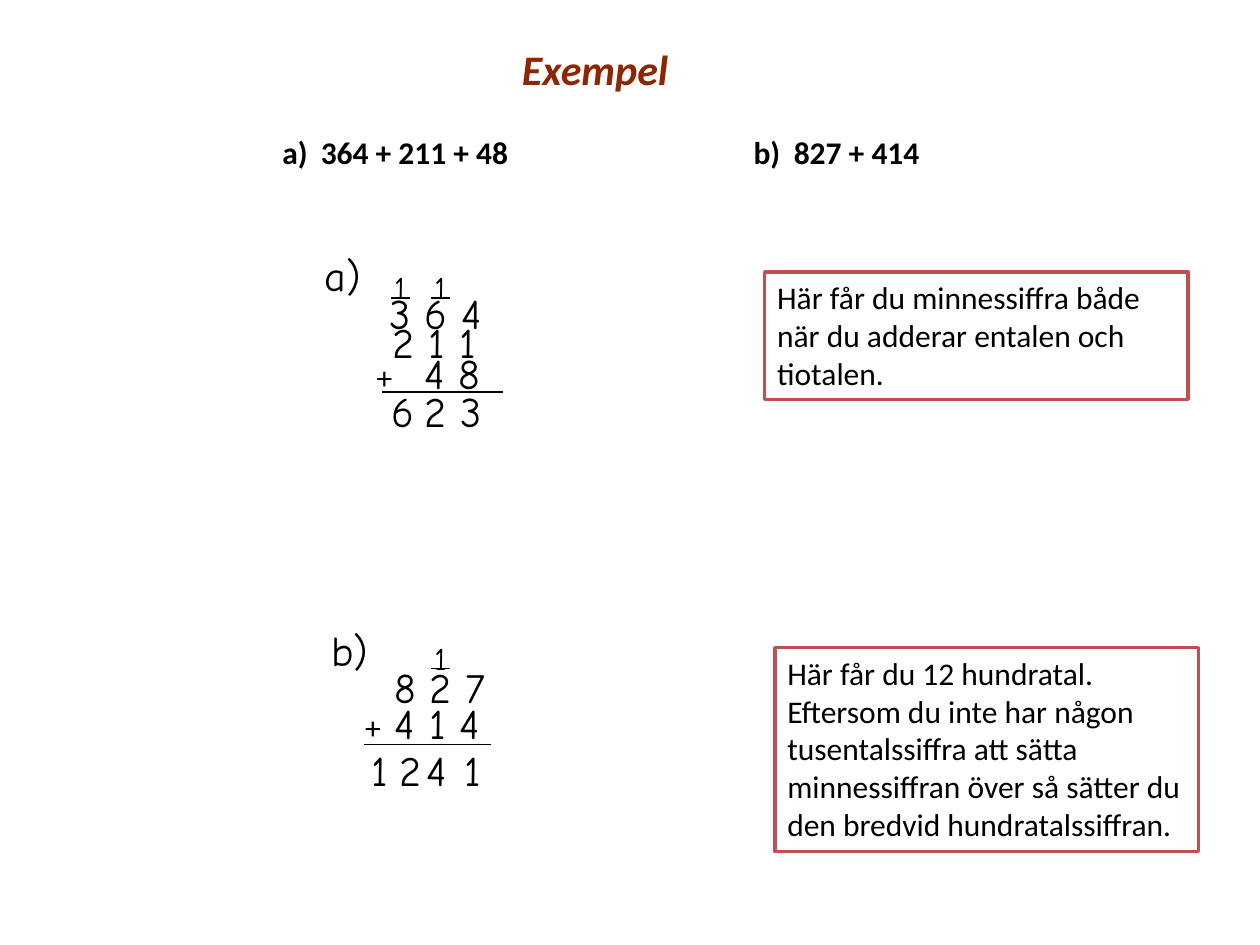
import lxml.etree
import pptx
import pptx.dml.color
import pptx.enum.shapes
import pptx.enum.text
import pptx.oxml.ns
import pptx.util

Pt = pptx.util.Pt
COLORS = {"text": "000000", "title": "8E2503", "box": "FFFFFF", "border": "C0504D"}
BODY_FONT = "Calibri"
DIGIT_FONT = "Comic Neue"


def rgb(name):
    return pptx.dml.color.RGBColor.from_string(COLORS[name])


def add_text(paragraph, text, font=BODY_FONT, size=18, color="text", bold=False, italic=False):
    run = paragraph.add_run()
    run.text = text
    run.font.name = font
    run.font.size = Pt(size)
    run.font.color.rgb = rgb(color)
    run.font.bold = bold
    run.font.italic = italic


def set_tab_stop(paragraph, position):
    properties = paragraph._p.get_or_add_pPr()
    tab_list = lxml.etree.SubElement(properties, pptx.oxml.ns.qn("a:tabLst"))
    lxml.etree.SubElement(tab_list, pptx.oxml.ns.qn("a:tab"), pos=str(Pt(position)), algn="l")


class ExampleSlide:
    """Holds the style and the slide; all lengths are in points."""

    def __init__(self, presentation):
        self.slide = presentation.slides.add_slide(presentation.slide_layouts[5])
        self.shapes = self.slide.shapes

    def format_frame(self, frame, wrap=True):
        frame.word_wrap = wrap
        frame.auto_size = pptx.enum.text.MSO_AUTO_SIZE.SHAPE_TO_FIT_TEXT
        frame.vertical_anchor = pptx.enum.text.MSO_ANCHOR.TOP
        paragraph = frame.paragraphs[0]
        paragraph.alignment = pptx.enum.text.PP_ALIGN.LEFT
        return paragraph

    def title(self, text, left, top, width, height):
        title = self.shapes.title
        title.left, title.top = Pt(left), Pt(top)
        title.width, title.height = Pt(width), Pt(height)
        paragraph = self.format_frame(title.text_frame, wrap=False)
        add_text(paragraph, text, size=24, color="title", bold=True, italic=True)

    def task(self, text, left, top, width, tab_stop):
        """Add a one-cell table that states the sum to work out."""
        table = self.shapes.add_table(1, 1, Pt(left), Pt(top), Pt(width), Pt(21.6)).table
        table.first_row = table.horz_banding = False
        cell = table.cell(0, 0)
        cell.fill.background()
        cell.margin_left = cell.margin_right = Pt(3.6)
        cell.margin_top = cell.margin_bottom = 0
        paragraph = cell.text_frame.paragraphs[0]
        set_tab_stop(paragraph, tab_stop)
        add_text(paragraph, text, bold=True)

    def empty_box(self, left, top, width, height):
        box = self.shapes.add_textbox(Pt(left), Pt(top), Pt(width), Pt(height))
        return self.format_frame(box.text_frame)

    def digits(self, text, left, top, width=21, size=24):
        height = size * 1.2 + 7.4
        add_text(self.empty_box(left, top, width, height), text, font=DIGIT_FONT, size=size)

    def plus_row(self, text, left, top, tab_stop=None):
        paragraph = self.empty_box(left, top, 130, 36)
        if tab_stop:
            set_tab_stop(paragraph, tab_stop)
        add_text(paragraph, "+")
        add_text(paragraph, text, font=DIGIT_FONT, size=24)

    def rule(self, left, right, y, weight=1):
        connector = self.shapes.add_connector(
            pptx.enum.shapes.MSO_CONNECTOR.STRAIGHT, Pt(left), Pt(y), Pt(right), Pt(y))
        connector.line.color.rgb = rgb("text")
        connector.line.width = Pt(weight)
        lxml.etree.SubElement(connector._element.spPr, pptx.oxml.ns.qn("a:effectLst"))

    def carry(self, left, top):
        """Add an underlined carry digit."""
        self.rule(left + 5, left + 16.2, top + 20.5, weight=0.75)
        self.digits("1", left, top, width=17.3, size=18)

    def comment(self, text, left, top, height):
        shape = self.shapes.add_shape(
            pptx.enum.shapes.MSO_SHAPE.RECTANGLE, Pt(left), Pt(top), Pt(242), Pt(height))
        shape.shadow.inherit = False
        shape.fill.solid()
        shape.fill.fore_color.rgb = rgb("box")
        shape.line.color.rgb = rgb("border")
        shape.line.width = Pt(2)
        add_text(self.format_frame(shape.text_frame), text)


def main():
    presentation = pptx.Presentation()
    presentation.slide_width, presentation.slide_height = Pt(720), Pt(540)
    example = ExampleSlide(presentation)

    example.title("Exempel", 291, 21, 98.6, 36)
    example.task("a)\t364 + 211 + 48", 157.7, 77, 208, tab_stop=22)
    example.task("b)\t827 + 414", 427, 77, 113.8, tab_stop=23)

    # Sum a
    example.digits("a)", 178.6, 139, width=39)
    example.digits("3 6 4", 215.3, 160.6, width=74)
    example.digits("2 1 1", 217.4, 177.1, width=67)
    example.plus_row("\t4 8", 208.1, 195.1, tab_stop=27.5)
    example.rule(218.2, 287.3, 223.9)
    for left in (218.2, 241.2):
        example.carry(left, 149.8)
    for digit, left in zip("623", (216.7, 235.4, 256.3)):
        example.digits(digit, left, 216.5)
    example.comment("Här får du minnessiffra både när du adderar entalen och tiotalen.",
                    437, 155.5, 72.7)

    # Sum b
    example.digits("b)", 182.2, 353.5, width=39)
    example.digits("8 2 7", 218.2, 374.4, width=75.6)
    example.plus_row(" 4 1 4", 201.6, 395.3)
    example.rule(208.1, 280.8, 425.5)
    example.carry(241.2, 361.4)
    for digit, left in zip("1241", (205.2, 221, 236.9, 258.5)):
        example.digits(digit, left, 421.9)
    example.comment("Här får du 12 hundratal. Eftersom du inte har någon tusentalssiffra att "
                    "sätta minnessiffran över så sätter du den bredvid hundratalssiffran.",
                    442.8, 370.1, 116.6)

    presentation.save("out.pptx")


if __name__ == "__main__":
    main()
